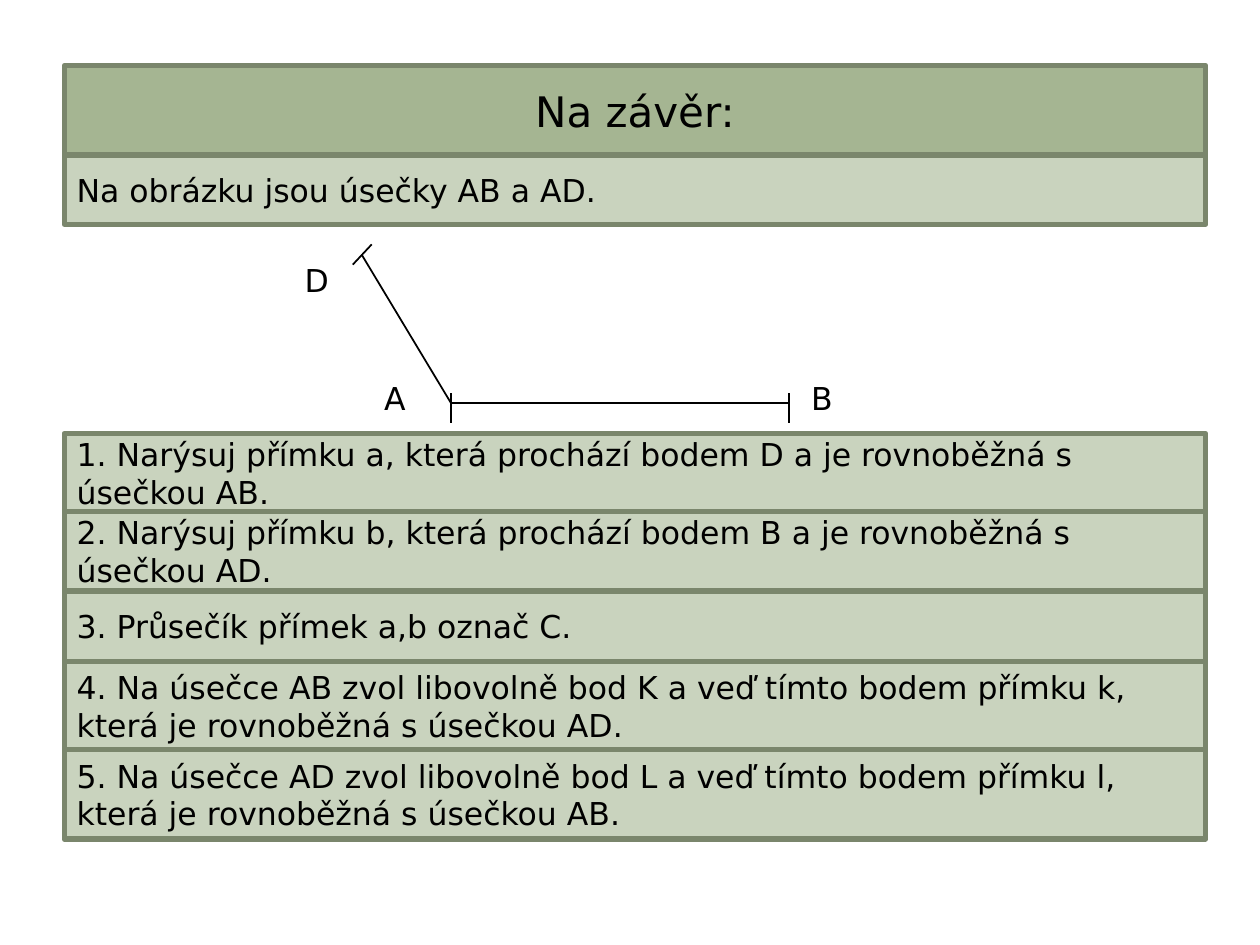
from dataclasses import dataclass

from lxml.etree import SubElement
from pptx import Presentation
from pptx.dml.color import RGBColor
from pptx.enum.shapes import MSO_CONNECTOR as Connector, MSO_SHAPE as Shape
from pptx.enum.text import MSO_ANCHOR as Anchor, MSO_AUTO_SIZE as AutoSize, PP_ALIGN as Align
from pptx.oxml.ns import qn
from pptx.util import Inches, Pt

COLORS = {
    "title": "A5B592",
    "panel": "C9D3BE",
    "border": "7A866C",
    "ink": "000000",
}
FONT = "DejaVu Sans"
LEFT, WIDTH = 0.51, 9.06
TITLE_TOP, TITLE_HEIGHT = 0.52, 0.71
INTRO_HEIGHT = 0.55
TASKS_TOP = 3.44
LABEL_HEIGHT = 0.4


@dataclass(frozen=True)
class Task:
    text: str
    height: float


@dataclass(frozen=True)
class Point:
    x: float
    y: float


@dataclass(frozen=True)
class Segment:
    start: Point
    end: Point


@dataclass(frozen=True)
class Label:
    text: str
    left: float
    top: float
    width: float


A, B, D = Point(3.58, 3.2), Point(6.26, 3.2), Point(2.87, 2.02)

SEGMENTS = [
    Segment(A, B),
    Segment(A, D),
    *(Segment(Point(end.x, 3.12), Point(end.x, 3.36)) for end in (B, A)),
    Segment(Point(2.8, 2.1), Point(2.95, 1.94)),
]

LABELS = [
    Label("B", 6.34, 2.96, 0.47),
    Label("A", 2.95, 2.96, 0.39),
    Label("D", 2.32, 2.02, 0.47),
]

TASKS = [
    Task("1. Narýsuj přímku a, která prochází bodem D a je rovnoběžná s úsečkou AB.", 0.62),
    Task("2. Narýsuj přímku b, která prochází bodem B a je rovnoběžná s úsečkou AD.", 0.63),
    Task("3. Průsečík přímek a,b označ C.", 0.56),
    Task("4. Na úsečce AB zvol libovolně bod K a veď tímto bodem přímku k, "
         "která je rovnoběžná s úsečkou AD.", 0.7),
    Task("5. Na úsečce AD zvol libovolně bod L a veď tímto bodem přímku l, "
         "která je rovnoběžná s úsečkou AB.", 0.71),
]


def color(name: str) -> RGBColor:
    return RGBColor.from_string(COLORS[name])


def write_text(shape, text: str, size: int = 18, align: Align = Align.LEFT) -> None:
    frame = shape.text_frame
    frame.word_wrap = True
    frame.text = text
    paragraph = frame.paragraphs[0]
    paragraph.alignment = align
    paragraph.font.name = FONT
    paragraph.font.size = Pt(size)
    paragraph.font.color.rgb = color("ink")


def format_panel(shape, fill: str) -> None:
    shape.fill.solid()
    shape.fill.fore_color.rgb = color(fill)
    shape.line.color.rgb = color("border")
    shape.line.width = Pt(3)
    shape.text_frame.vertical_anchor = Anchor.MIDDLE
    shape.text_frame.auto_size = AutoSize.NONE


def format_title(title) -> None:
    title.left, title.top = Inches(LEFT), Inches(TITLE_TOP)
    title.width, title.height = Inches(WIDTH), Inches(TITLE_HEIGHT)
    write_text(title, "Na závěr:", 24, Align.CENTER)
    format_panel(title, "title")


def add_panel(slide, text: str, top: float, height: float) -> None:
    panel = slide.shapes.add_shape(
        Shape.RECTANGLE, Inches(LEFT), Inches(top), Inches(WIDTH), Inches(height))
    panel.shadow.inherit = False
    write_text(panel, text)
    format_panel(panel, "panel")


def add_segment(slide, segment: Segment) -> None:
    start, end = segment.start, segment.end
    line = slide.shapes.add_connector(
        Connector.STRAIGHT, Inches(start.x), Inches(start.y), Inches(end.x), Inches(end.y))
    line.line.color.rgb = color("ink")
    line.line.width = Pt(1)
    SubElement(line._element.spPr, qn("a:effectLst"))


def add_label(slide, label: Label) -> None:
    box = slide.shapes.add_textbox(
        Inches(label.left), Inches(label.top), Inches(label.width), Inches(LABEL_HEIGHT))
    write_text(box, label.text)
    box.text_frame.auto_size = AutoSize.SHAPE_TO_FIT_TEXT


def main() -> None:
    presentation = Presentation()
    presentation.slide_width, presentation.slide_height = Inches(10), Inches(7.5)
    slide = presentation.slides.add_slide(presentation.slide_layouts.get_by_name("Title Only"))

    format_title(slide.shapes.title)
    add_panel(slide, "Na obrázku jsou úsečky AB a AD.", TITLE_TOP + TITLE_HEIGHT, INTRO_HEIGHT)

    for segment in SEGMENTS:
        add_segment(slide, segment)
    for label in LABELS:
        add_label(slide, label)

    top = TASKS_TOP
    for task in TASKS:
        add_panel(slide, task.text, top, task.height)
        top += task.height

    presentation.save("out.pptx")


if __name__ == "__main__":
    main()
